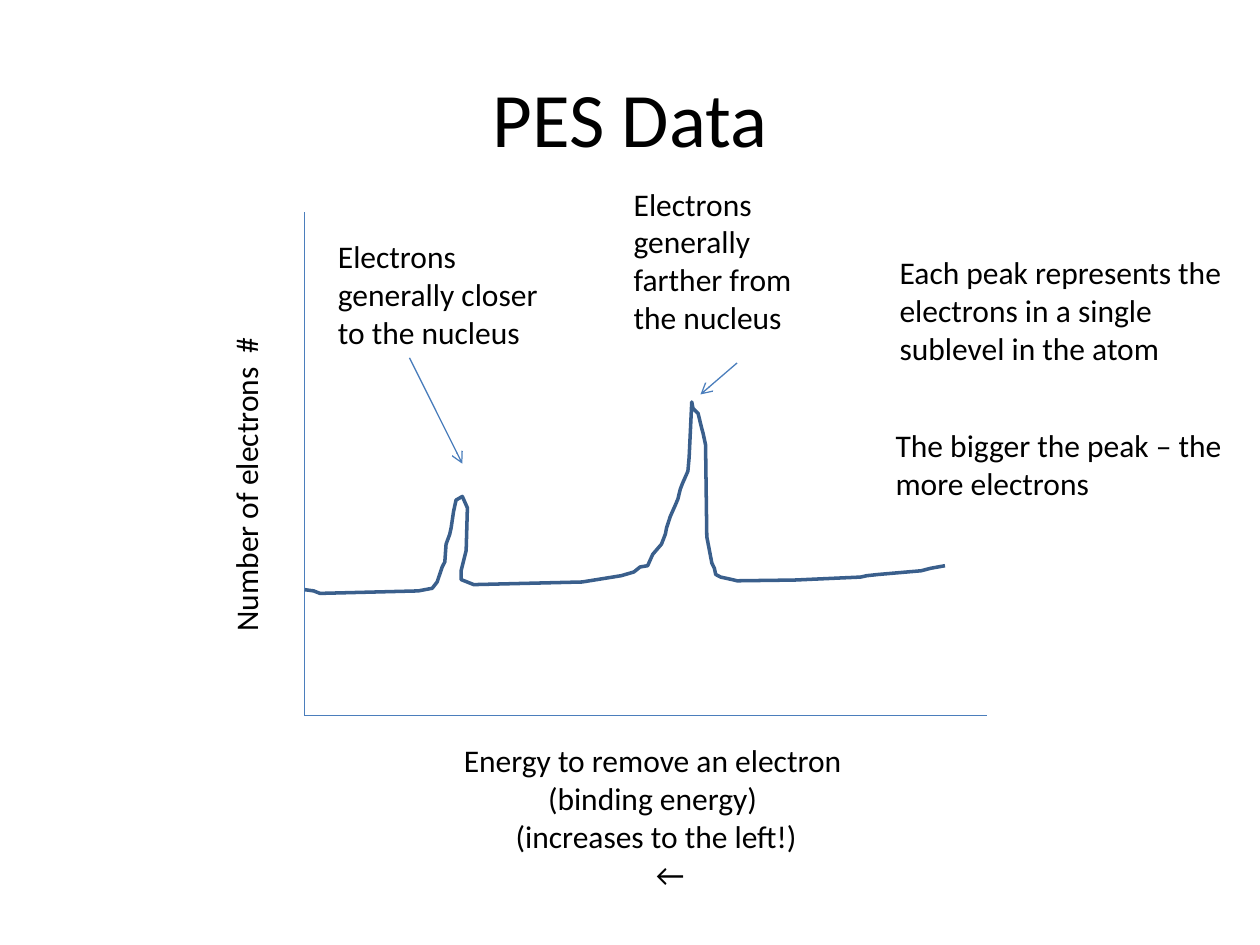
"""Build a slide that explains a photoelectron spectrum with two labelled peaks."""
from lxml import etree
from pptx import Presentation
from pptx import util as u
from pptx.dml.color import RGBColor
from pptx.enum import text
from pptx.oxml.ns import qn

COLORS = {"text": "000000", "axis": "4B7EBC", "curve": "3A5F8C"}
FONT = "Calibri"
BODY = 18
ARROW_INDENT = 16
LEFT, CENTER = text.PP_ALIGN.LEFT, text.PP_ALIGN.CENTER

TITLE = ("PES Data", (36, 21.6, 648, 90))
ENERGY_LABEL = (
    ["Energy to remove an electron ", "(binding energy) ", "(increases to the left!)", "←"],
    (210, 420, 330, 94.5),
)
COUNT_LABEL = ("Number of electrons  #", (48.2, 261.4, 184.3, 28.8))
NOTES = [
    (["Electrons generally farther from the nucleus"], (355, 102, 132, 94.5)),
    (["Electrons", "generally closer to the nucleus"], (186, 132, 132, 72.7)),
    (["The bigger the peak – the more electrons"], (504.7, 240, 210, 51)),
    (["Each peak represents the electrons in a single sublevel in the atom"],
     (507, 141, 210, 72.7)),
]
ORIGIN = (174.2, 409)
AXIS_ENDS = [(174.2, 121), (563.8, 409)]
POINTERS = [((234, 204.5), (264.2, 265)), ((421.2, 207.4), (400.3, 225.4))]
SPECTRUM = [
    (174.2, 337), (179.3, 337.7), (182.9, 339.1), (239, 337.7), (247, 336.2),
    (249.8, 332.6), (252.7, 324), (254.2, 321.1), (254.9, 311), (257, 305.3),
    (257.8, 301.7), (259.2, 292.3), (260.6, 285.8), (264.2, 283.7), (267.1, 290.2),
    (266.4, 314.6), (263.5, 326.2), (263.5, 331.2), (270.7, 334.1), (332.6, 332.6),
    (341.3, 331.2), (355, 329), (362.2, 326.9), (365.8, 324), (370.1, 323.3),
    (373, 316.8), (378, 311), (380.2, 305.3), (380.9, 301.7), (383, 295.2),
    (385.9, 288.7), (387.4, 285.1), (388.8, 279.4), (390.2, 275.8), (393.1, 269.3),
    (393.8, 261.4), (395.3, 229.7), (396, 233.3), (398.9, 236.2), (401, 244.8),
    (401.8, 247.7), (403.2, 254.2), (403.9, 306.7), (406.8, 321.8), (408.2, 324.7),
    (409, 328.3), (411.8, 329.8), (418.3, 331.2), (421.2, 331.9), (454, 331.5),
    (491.8, 329.8), (495.4, 329), (501.8, 328.3), (526.3, 326.2), (532.1, 324.7),
    (540, 323.3),
]


def pts(values):
    return [u.Pt(v) for v in values]


def add_text(s, lines, box, size=BODY, align=LEFT, wrap=True):
    sp = s.shapes.add_textbox(*pts(box))
    tf = sp.text_frame
    tf.word_wrap = wrap
    for i, line in enumerate(lines):
        p = tf.paragraphs[0] if i == 0 else tf.add_paragraph()
        p.text = line
        p.alignment = align
        p.font.name = FONT
        p.font.size = u.Pt(size)
        p.font.color.rgb = RGBColor.from_string(COLORS["text"])
    return sp


def style_line(sp, color, width):
    sp.line.color.rgb = RGBColor.from_string(COLORS[color])
    sp.line.width = u.Pt(width)


def add_line(s, start, end, arrow=False):
    cx = s.shapes.add_connector(1, *pts(start + end))
    style_line(cx, "axis", 0.75)
    if arrow:
        etree.SubElement(cx.line._get_or_add_ln(), qn("a:tailEnd"), type="arrow")
    etree.SubElement(cx._element.spPr, qn("a:effectLst"))


def add_spectrum(s):
    start, *rest = [pts(point) for point in SPECTRUM]
    builder = s.shapes.build_freeform(*start)
    builder.add_line_segments(rest, close=False)
    sp = builder.convert_to_shape()
    sp.shadow.inherit = False
    sp.fill.background()
    style_line(sp, "curve", 2)
    etree.SubElement(sp.line._get_or_add_ln(), qn("a:round"))


def main():
    prs = Presentation()
    prs.slide_width, prs.slide_height = u.Pt(720), u.Pt(540)
    s = prs.slides.add_slide(prs.slide_layouts[6])

    title, box = TITLE
    sp = add_text(s, [title], box, 44, CENTER)
    sp.text_frame.vertical_anchor = text.MSO_ANCHOR.MIDDLE

    for end in AXIS_ENDS:
        add_line(s, ORIGIN, end)

    sp = add_text(s, *ENERGY_LABEL, align=CENTER)
    arrow = sp.text_frame.paragraphs[-1]
    arrow._p.get_or_add_pPr().set("marL", str(u.Pt(ARROW_INDENT)))

    label, box = COUNT_LABEL
    add_text(s, [label], box, wrap=False).rotation = 270

    for lines, box in NOTES:
        add_text(s, lines, box)
    for start, end in POINTERS:
        add_line(s, start, end, arrow=True)
    add_spectrum(s)
    prs.save("out.pptx")


if __name__ == "__main__":
    main()
